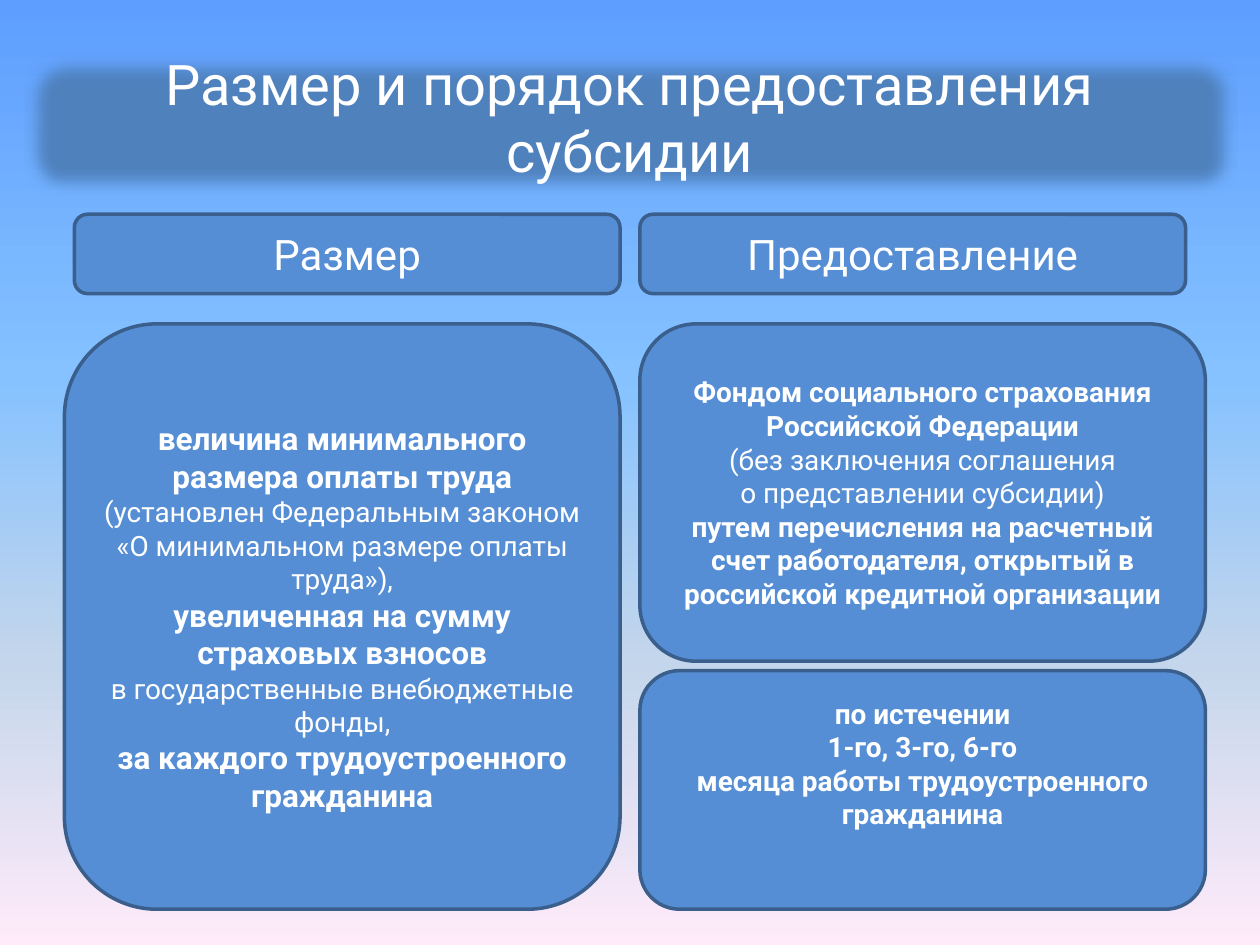
from dataclasses import dataclass

from lxml.etree import SubElement
from pptx import Presentation
from pptx.dml.color import RGBColor
from pptx.enum.shapes import MSO_SHAPE as SHAPE
from pptx.enum.text import MSO_ANCHOR as ANCHOR, PP_ALIGN as ALIGN
from pptx.oxml.ns import qn
from pptx.util import Cm, Pt


@dataclass(frozen=True)
class Theme:
    font: str = "Roboto"
    text: str = "FFFFFF"
    banner: str = "4F81BD"
    card: str = "558ED5"
    outline: str = "3A5F8C"
    sky: tuple = ((0, "5E9EFF"), (40, "85C2FF"), (70, "C4D6EB"), (100, "FFEBFA"))
    title: int = 32
    heading: int = 24
    strong: int = 18
    body: int = 16


THEME = Theme()
LEFT, RIGHT = 1.3, 12.9
HEAD_TOP, CARD_TOP = 4.32, 6.53

# Each paragraph is a list of (text, size, bold) runs; None is a line break.
AMOUNT = [
    [("величина минимального размера оплаты труда", THEME.strong, True)],
    [("(установлен Федеральным законом «О минимальном размере оплаты труда»),",
      THEME.body, False)],
    [("увеличенная на сумму страховых взносов", THEME.strong, True), None,
     ("в государственные внебюджетные фонды,", THEME.body, False)],
    [("за каждого трудоустроенного гражданина", THEME.strong, True)],
]
PROVIDER = [
    [("Фондом социального страхования Российской Федерации", THEME.body, True)],
    [("(без заключения соглашения", THEME.body, False)],
    [("о представлении субсидии)", THEME.body, False)],
    [("путем перечисления на расчетный счет работодателя, открытый в "
      "российской кредитной организации", THEME.body, True)],
]
TERMS = [
    [("по истечении", THEME.body, True), None,
     ("1-го, 3-го, 6-го", THEME.body, True), None,
     ("месяца работы трудоустроенного гражданина", THEME.body, True)],
]


def paint_background(s):
    fill = s.background.fill
    fill.gradient()
    fill.gradient_angle = 270
    stops = next(s.element.iter(qn("a:gsLst")))
    stops.clear()
    for percent, color in THEME.sky:
        stop = SubElement(stops, qn("a:gs"), pos=str(percent * 1000))
        SubElement(stop, qn("a:srgbClr"), val=color)


def write(sp, paragraphs):
    tf = sp.text_frame
    tf.word_wrap = True
    tf.vertical_anchor = ANCHOR.MIDDLE
    for i, runs in enumerate(paragraphs):
        p = tf.add_paragraph() if i else tf.paragraphs[0]
        p.alignment = ALIGN.CENTER
        for run in runs:
            if run is None:
                p.add_line_break()
                continue
            r = p.add_run()
            r.text, size, r.font.bold = run
            r.font.size = Pt(size)
            r.font.name = THEME.font
            r.font.color.rgb = RGBColor.from_string(THEME.text)


def add_panel(s, left, top, width, height, color):
    sp = s.shapes.add_shape(SHAPE.ROUNDED_RECTANGLE,
                            Cm(left), Cm(top), Cm(width), Cm(height))
    sp.shadow.inherit = False
    sp.fill.solid()
    sp.fill.fore_color.rgb = RGBColor.from_string(color)
    sp.line.color.rgb = RGBColor.from_string(THEME.outline)
    sp.line.width = Pt(2)
    return sp


def add_card(s, left, top, width, height, paragraphs):
    sp = add_panel(s, left, top, width, height, THEME.card)
    write(sp, paragraphs)
    return sp


def add_title(s, text):
    """Put the title over a banner with soft edges."""
    banner = add_panel(s, 0.51, 1.12, 24.41, 2.79, THEME.banner)
    effects = banner.element.spPr.find(qn("a:effectLst"))
    SubElement(effects, qn("a:softEdge"), rad=str(Pt(9)))
    box = s.shapes.add_textbox(Cm(1.27), Cm(0.76), Cm(22.86), Cm(3.18))
    write(box, [[(text, THEME.title, False)]])


def main():
    prs = Presentation()
    prs.slide_width, prs.slide_height = Cm(25.4), Cm(19.05)
    s = prs.slides.add_slide(prs.slide_layouts[6])
    paint_background(s)
    add_title(s, "Размер и порядок предоставления субсидии")

    for left, text in ((1.5, "Размер"), (RIGHT, "Предоставление")):
        add_card(s, left, HEAD_TOP, 11, 1.6, [[(text, THEME.heading, False)]])

    add_card(s, LEFT, CARD_TOP, 11.2, 11.8, AMOUNT)
    add_card(s, RIGHT, CARD_TOP, 11.4, 6.8, PROVIDER)
    terms = add_card(s, RIGHT, 13.52, 11.4, 4.81, TERMS)
    terms.text_frame.margin_bottom = Cm(1.2)

    prs.save("out.pptx")


if __name__ == "__main__":
    main()
